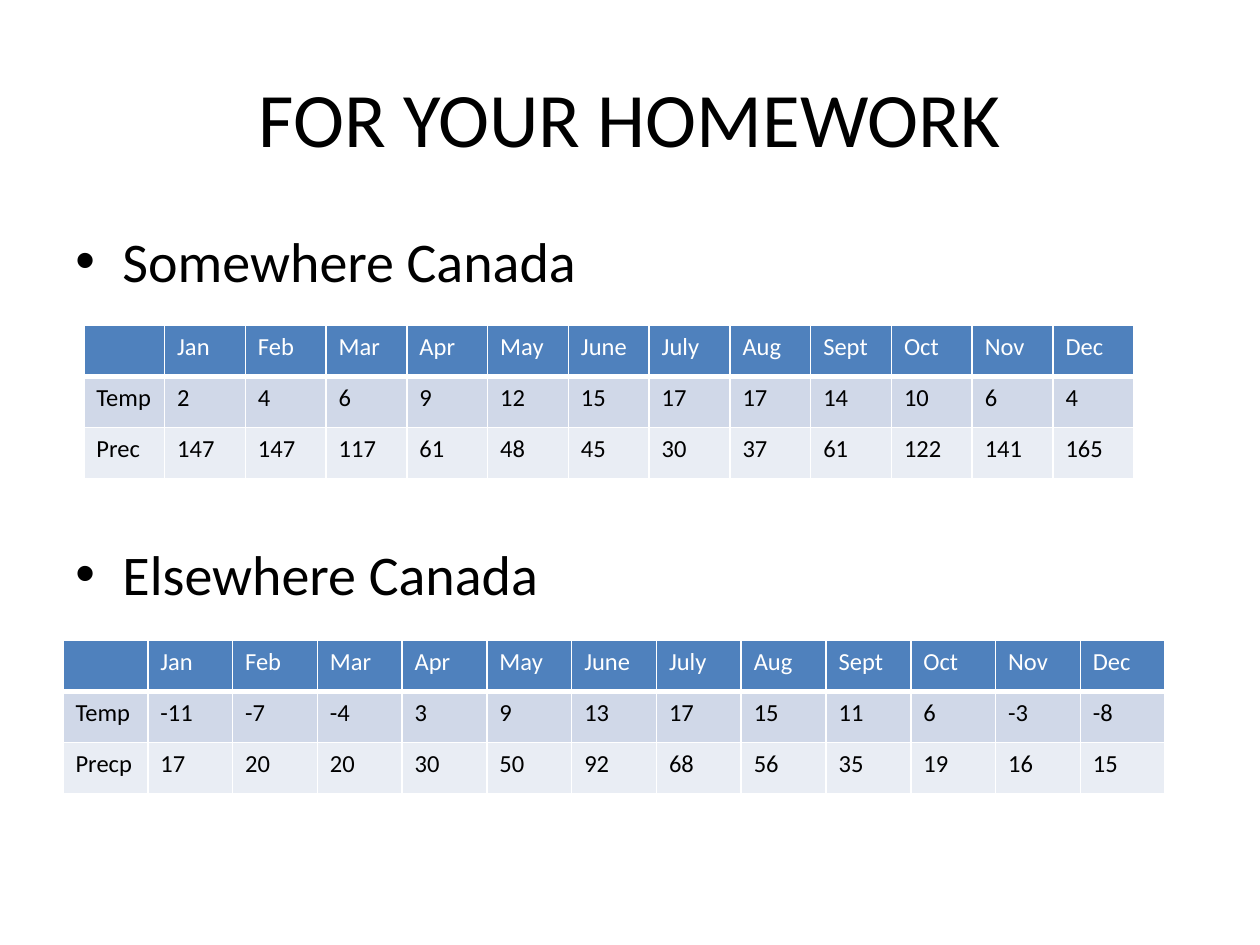
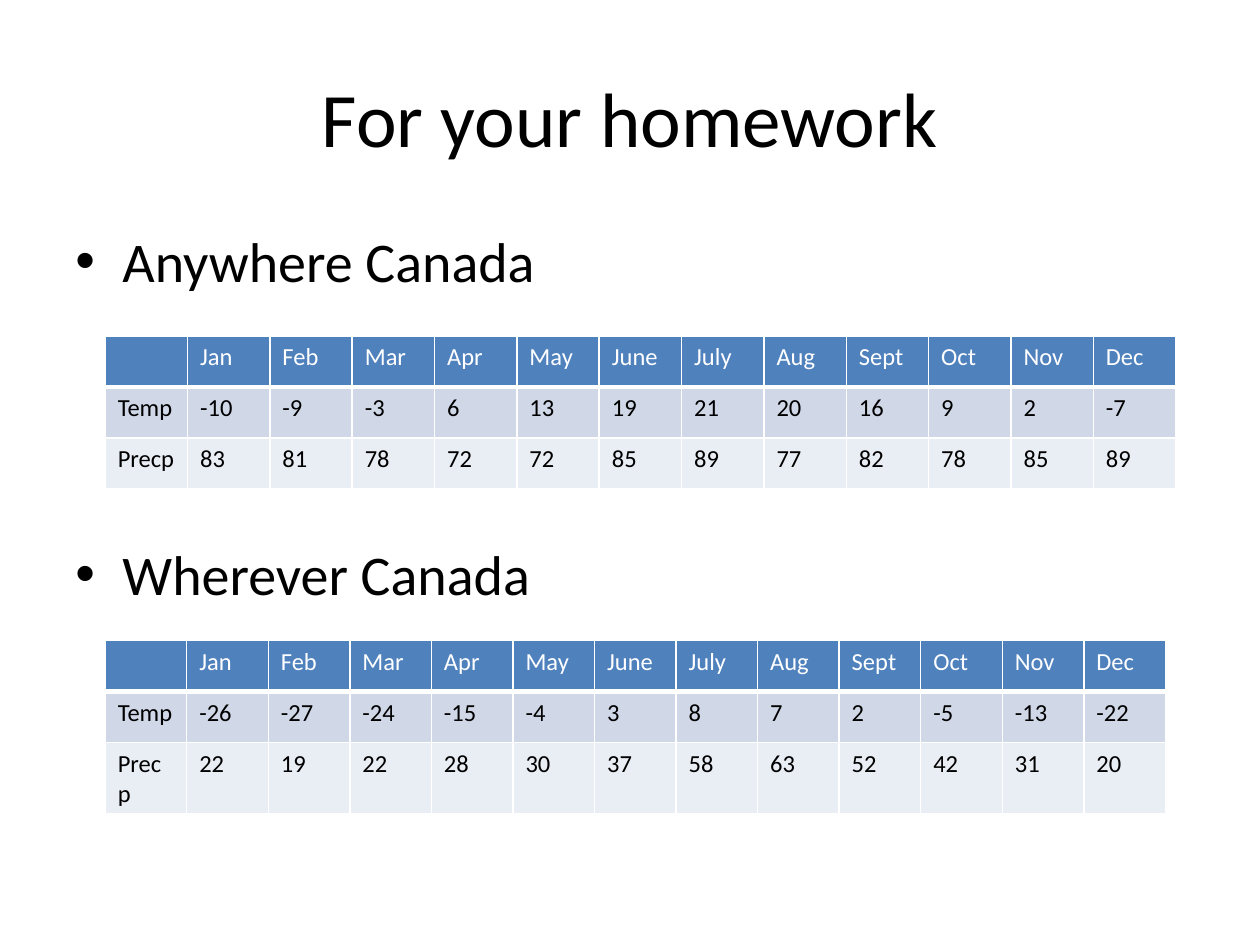
from dataclasses import dataclass

from lxml.etree import SubElement
from pptx import Presentation
from pptx.dml.color import RGBColor as Rgb
from pptx.enum.text import MSO_ANCHOR as Anchor, PP_ALIGN as Align
from pptx.oxml.ns import qn
from pptx.slide import Slide
from pptx.table import _Cell as Cell
from pptx.text.text import _Paragraph as Para
from pptx.util import Cm, Pt

FONT = "Calibri"
HUES = {
    "ink": "000000",
    "white": "FFFFFF",
    "head": "4F81BD",
    "dark": "D0D8E8",
    "light": "E9EDF4",
}
BANDS = ["head", "dark", "light"]
MONTHS = ["Jan", "Feb", "Mar", "Apr", "May", "June",
          "July", "Aug", "Sept", "Oct", "Nov", "Dec"]
ROW = 1.03
INDENT = 0.95
GAP = 140.3


@dataclass
class Climate:
    place: str
    left: float
    top: float
    width: float
    temps: list[int]
    rain: list[int]
    label: str = "Precp"


@dataclass
class Page:
    title: str
    towns: list[Climate]


PAGES = [
    Page("FOR YOUR HOMEWORK", [
        Climate("Somewhere Canada", 1.69, 6.56, 21.17,
                [2, 4, 6, 9, 12, 15, 17, 17, 14, 10, 6, 4],
                [147, 147, 117, 61, 48, 45, 30, 37, 61, 122, 141, 165],
                "Prec"),
        Climate("Elsewhere Canada", 1.27, 12.91, 22.22,
                [-11, -7, -4, 3, 9, 13, 17, 15, 11, 6, -3, -8],
                [17, 20, 20, 30, 50, 92, 68, 56, 35, 19, 16, 15]),
    ]),
    Page("For your homework", [
        Climate("Anywhere Canada", 2.12, 6.77, 21.59,
                [-10, -9, -3, 6, 13, 19, 21, 20, 16, 9, 2, -7],
                [83, 81, 78, 72, 72, 85, 89, 77, 82, 78, 85, 89]),
        Climate("Wherever Canada", 2.12, 12.91, 21.38,
                [-26, -27, -24, -15, -4, 3, 8, 7, 2, -5, -13, -22],
                [22, 19, 22, 28, 30, 37, 58, 63, 52, 42, 31, 20]),
    ]),
]


def add_run(para: Para, text: str, size: int, hue: str = "ink") -> None:
    run = para.add_run()
    run.text = text
    run.font.name = FONT
    run.font.size = Pt(size)
    run.font.color.rgb = Rgb.from_string(HUES[hue])


def add_title(slide: Slide, text: str) -> None:
    box = slide.shapes.add_textbox(Cm(1.27), Cm(0.76), Cm(22.86), Cm(3.18))
    frame = box.text_frame
    frame.word_wrap = True
    frame.vertical_anchor = Anchor.MIDDLE
    para = frame.paragraphs[0]
    para.alignment = Align.CENTER
    add_run(para, text, 44)


def add_places(slide: Slide, names: list[str]) -> None:
    box = slide.shapes.add_textbox(Cm(1.27), Cm(4.45), Cm(22.86), Cm(12.57))
    frame = box.text_frame
    frame.word_wrap = True
    for pos, name in enumerate(names):
        para = frame.add_paragraph() if pos else frame.paragraphs[0]
        para.space_before = Pt(GAP if pos else 0)
        props = para._p.get_or_add_pPr()
        props.set("marL", str(Cm(INDENT)))
        props.set("indent", str(-Cm(INDENT)))
        SubElement(props, qn("a:buFont"), typeface="Arial")
        SubElement(props, qn("a:buChar"), char="•")
        add_run(para, name, 32)


def add_edges(cell: Cell, row: int) -> None:
    props = cell._tc.get_or_add_tcPr()
    edges = {"L": 1, "R": 1, "T": 3 if row == 1 else 1, "B": 1 if row else 3}
    for side, width in edges.items():
        line = SubElement(props, qn(f"a:ln{side}"), w=str(Pt(width)))
        fill = SubElement(line, qn("a:solidFill"))
        SubElement(fill, qn("a:srgbClr"), val=HUES["white"])


def add_grid(slide: Slide, town: Climate) -> None:
    rows = [["", *MONTHS], ["Temp", *town.temps], [town.label, *town.rain]]
    count = len(rows[0])
    frame = slide.shapes.add_table(
        len(rows), count, Cm(town.left), Cm(town.top),
        Cm(town.width), Cm(ROW * len(rows)))
    table = frame.table
    table.first_row = False
    table.horz_banding = False
    for col in table.columns:
        col.width = Cm(town.width / count)
    for r, (row, band) in enumerate(zip(rows, BANDS)):
        table.rows[r].height = Cm(ROW)
        for c, value in enumerate(row):
            cell = table.cell(r, c)
            add_edges(cell, r)
            cell.fill.solid()
            cell.fill.fore_color.rgb = Rgb.from_string(HUES[band])
            if value != "":
                add_run(cell.text_frame.paragraphs[0], str(value), 14,
                        "ink" if r else "white")


def main() -> None:
    deck = Presentation()
    deck.slide_width = Cm(25.4)
    deck.slide_height = Cm(19.05)
    for page in PAGES:
        slide = deck.slides.add_slide(deck.slide_layouts[6])
        add_title(slide, page.title)
        add_places(slide, [town.place for town in page.towns])
        for town in page.towns:
            add_grid(slide, town)
    deck.save("out.pptx")


if __name__ == "__main__":
    main()
